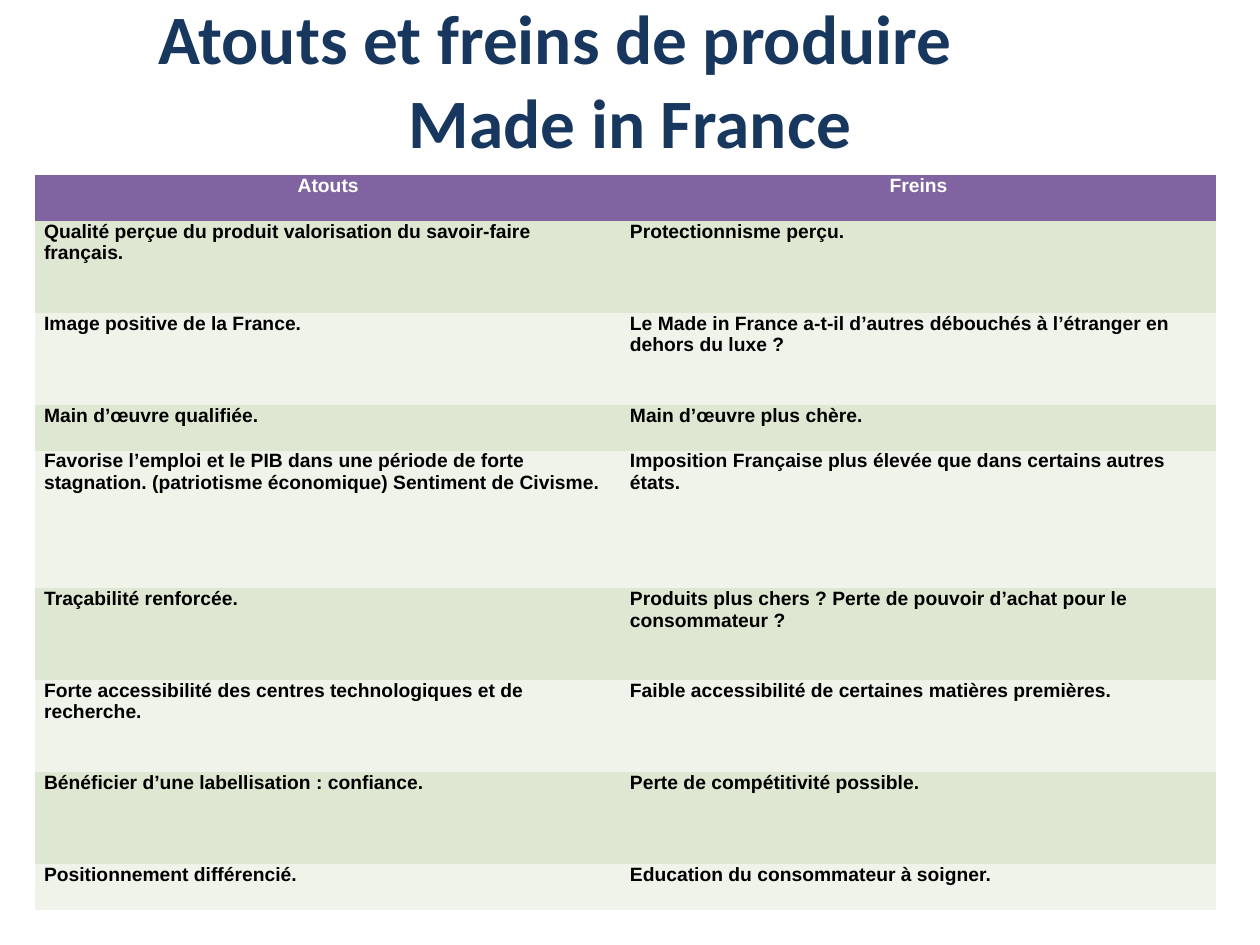
from pptx import Presentation
from pptx.dml.color import RGBColor
from pptx.enum.text import MSO_ANCHOR, PP_ALIGN
from pptx.oxml.ns import qn
from pptx.util import Inches, Pt

WIDTH, HEIGHT = 10, 7.5
NO_STYLE = "{2D5ABB26-0587-4C30-8999-92F81FD0307C}"
NAVY, PURPLE, WHITE, BLACK = "17375E", "8064A2", "FFFFFF", "000000"
BANDS = ("DEE7D1", "EFF3EA")
COLUMNS = (4.65, 4.72)
TABLE_HEIGHT = 5.83

ROWS = [
    (1, "Atouts", "Freins"),
    (2, "Qualité perçue du produit valorisation du savoir-faire français.",
     "Protectionnisme perçu."),
    (2, "Image positive de la France.",
     "Le Made in France a-t-il d’autres débouchés à l’étranger en dehors du luxe ?"),
    (1, "Main d’œuvre qualifiée.", "Main d’œuvre plus chère."),
    (3, "Favorise l’emploi et le PIB dans une période de forte stagnation. "
        "(patriotisme économique) Sentiment de Civisme.",
     "Imposition Française plus élevée que dans certains autres états."),
    (2, "Traçabilité renforcée.",
     "Produits plus chers ? Perte de pouvoir d’achat pour le consommateur ?"),
    (2, "Forte accessibilité des centres technologiques et de recherche.",
     "Faible accessibilité de certaines matières premières."),
    (2, "Bénéficier d’une labellisation : confiance.",
     "Perte de compétitivité possible."),
    (1, "Positionnement différencié.", "Education du consommateur à soigner."),
]


def color(value):
    """Turn a hex string into a colour."""
    return RGBColor.from_string(value)


def add_run(p, text, font, size, fill):
    """Add one bold run to a paragraph."""
    r = p.add_run()
    r.text = text
    r.font.name, r.font.size, r.font.bold = font, Pt(size), True
    r.font.color.rgb = color(fill)


def add_title(s):
    """Add the two-line title, its first line indented from the left."""
    sp = s.shapes.add_textbox(Inches(0.05 * WIDTH), 0,
                              Inches(0.9 * WIDTH), Inches(HEIGHT / 6))
    tf = sp.text_frame
    tf.word_wrap = True
    tf.vertical_anchor = MSO_ANCHOR.MIDDLE
    first, second = tf.paragraphs[0], tf.add_paragraph()
    first.alignment, second.alignment = PP_ALIGN.LEFT, PP_ALIGN.CENTER
    first._p.get_or_add_pPr().set("marL", str(Inches(0.66)))
    add_run(first, "Atouts et freins de produire", "Calibri", 39.6, NAVY)
    add_run(second, "Made in France", "Calibri", 39.6, NAVY)


def fill_cell(cell, text, background, ink, alignment):
    """Set the text, margins and background of a table cell."""
    cell.fill.solid()
    cell.fill.fore_color.rgb = color(background)
    cell.margin_left = cell.margin_right = Inches(0.07)
    cell.margin_top = cell.margin_bottom = 0
    p = cell.text_frame.paragraphs[0]
    p.alignment = alignment
    add_run(p, text, "Arial", 11, ink)


def add_comparison(s):
    """Add the table, each row a whole number of height units."""
    unit = TABLE_HEIGHT / sum(row[0] for row in ROWS)
    table = s.shapes.add_table(len(ROWS), len(COLUMNS), Inches(0.28), Inches(1.39),
                               Inches(sum(COLUMNS)), Inches(TABLE_HEIGHT)).table
    table._tbl.tblPr.find(qn("a:tableStyleId")).text = NO_STYLE
    for column, width in zip(table.columns, COLUMNS):
        column.width = Inches(width)
    for i, (units, *texts) in enumerate(ROWS):
        table.rows[i].height = Inches(units * unit)
        if i == 0:
            look = PURPLE, WHITE, PP_ALIGN.CENTER
        else:
            look = BANDS[(i - 1) % 2], BLACK, PP_ALIGN.LEFT
        for j, text in enumerate(texts):
            fill_cell(table.cell(i, j), text, *look)


def main():
    """Build and save the slide."""
    prs = Presentation()
    prs.slide_width, prs.slide_height = Inches(WIDTH), Inches(HEIGHT)
    s = prs.slides.add_slide(prs.slide_layouts[6])
    add_title(s)
    add_comparison(s)
    prs.save("out.pptx")


if __name__ == "__main__":
    main()
